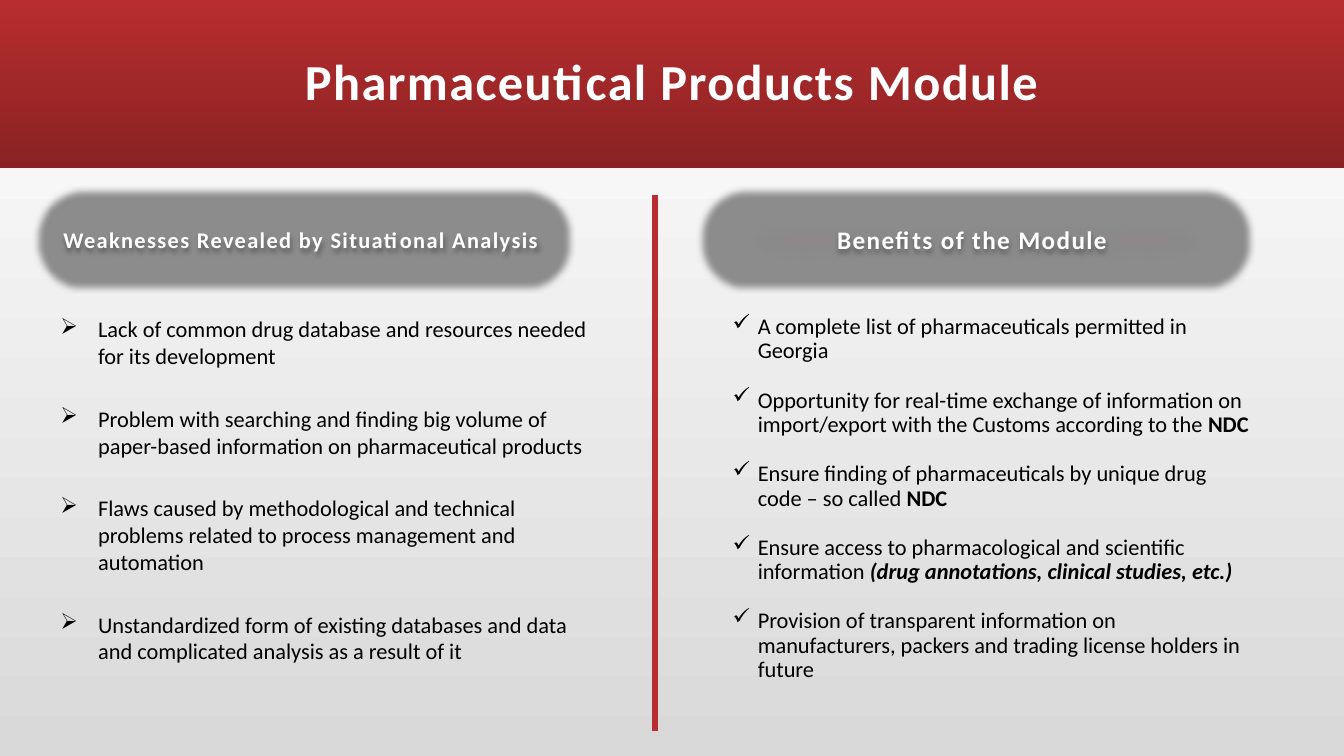
from dataclasses import dataclass

from lxml import etree
from pptx import Presentation
from pptx import util as u
from pptx.dml.color import RGBColor
from pptx.enum import shapes, text
from pptx.oxml import parse_xml
from pptx.oxml.ns import nsdecls, qn

Pt = u.Pt
RED, DARK_RED, GREY = "B82D2F", "8A2223", "8C8C8C"
WHITE, BLACK, LIGHT_GREY = "FFFFFF", "000000", "D9D9D9"
SHADOW = (
    '<a:outerShdw blurRad="44450" dist="27940" dir="5400000" algn="ctr" rotWithShape="0">'
    '<a:srgbClr val="000000"><a:alpha val="32000"/></a:srgbClr></a:outerShdw>'
)


@dataclass
class Span:
    text: str
    bold: bool = False
    italic: bool = False


@dataclass
class Box:
    left: float
    top: float
    width: float
    height: float

    def lengths(self) -> list[int]:
        return [Pt(v) for v in (self.left, self.top, self.width, self.height)]


@dataclass
class Column:
    heading: str
    heading_size: float
    heading_box: Box
    list_box: Box
    bullet: str
    indent: float
    line_spacing: float
    gap: float
    items: list[list[Span]]


COLUMNS = [
    Column(
        "Weaknesses Revealed by Situational Analysis ", 16,
        Box(26.6, 144.7, 381.6, 53.3), Box(36, 221.8, 393, 282), "➢", 27, 1, 25.5,
        [
            [Span("Lack of common drug database and resources needed for its development")],
            [Span("Problem with searching and finding big volume of paper-based "
                  "information on pharmaceutical products")],
            [Span("Flaws caused by methodological and technical problems related to "
                  "process management and automation")],
            [Span("Unstandardized form of existing databases and data and complicated "
                  "analysis as a result of it")],
        ],
    ),
    Column(
        "Benefits of the Module ", 18,
        Box(500.4, 144.7, 393.1, 53.3), Box(516.2, 221.8, 387.4, 288), "✓", 18, 0.9, 18,
        [
            [Span("A complete list of pharmaceuticals permitted in Georgia")],
            [Span("Opportunity for real-time exchange of information on import/export "
                  "with the Customs according to the "), Span("NDC", True)],
            [Span("Ensure finding of pharmaceuticals by unique drug code – so called "),
             Span("NDC", True)],
            [Span("Ensure access to pharmacological and scientific information "),
             Span("(drug annotations, clinical studies, etc.)", True, True)],
            [Span("Provision of transparent information on manufacturers, packers and "
                  "trading license holders in future")],
        ],
    ),
]


def rgb(value: str) -> RGBColor:
    return RGBColor.from_string(value)


def set_gradient(fill, start: str, end: str, angle: float) -> None:
    fill.gradient()
    fill.gradient_angle = angle
    for stop, color in zip(fill.gradient_stops, (start, end)):
        stop.color.rgb = rgb(color)


def set_effects(sp, soft_edge: float = 0, shadow: str = "") -> None:
    """Replace the effects of a shape or connector; soft_edge is in points."""
    spPr = sp._element.spPr
    for old in spPr.findall(qn("a:effectLst")):
        spPr.remove(old)
    soft = f'<a:softEdge rad="{Pt(soft_edge)}"/>' if soft_edge else ""
    spPr.append(parse_xml(f'<a:effectLst {nsdecls("a")}>{shadow}{soft}</a:effectLst>'))


def add_block(s, kind, box: Box, color: str):
    sp = s.shapes.add_shape(kind, *box.lengths())
    sp.shadow.inherit = False
    sp.fill.solid()
    sp.fill.fore_color.rgb = rgb(color)
    sp.line.fill.background()
    return sp


def format_run(r, size: float, color: str, bold: bool = False, italic: bool = False) -> None:
    r.font.name = "Calibri"
    r.font.size = Pt(size)
    r.font.color.rgb = rgb(color)
    r.font.bold = bold
    r.font.italic = italic


def write_heading(sp, heading: str, size: float) -> None:
    """Centred bold white text with letters spaced by one point."""
    tf = sp.text_frame
    tf.word_wrap = True
    tf.vertical_anchor = text.MSO_ANCHOR.MIDDLE
    tf.text = heading
    p = tf.paragraphs[0]
    p.alignment = text.PP_ALIGN.CENTER
    r = p.runs[0]
    format_run(r, size, WHITE, bold=True)
    r.font._element.set("spc", "100")


def add_bullet(p, char: str, indent: float) -> None:
    pPr = p._p.get_or_add_pPr()
    pPr.set("marL", str(Pt(indent)))
    pPr.set("indent", str(-Pt(indent)))
    etree.SubElement(pPr, qn("a:buChar")).set("char", char)


def add_column(s, column: Column) -> None:
    b = column.heading_box
    halo_box = Box(b.left - 3, b.top - 12, b.width + 6, b.height + 24)
    halo = add_block(s, shapes.MSO_SHAPE.ROUNDED_RECTANGLE, halo_box, GREY)
    halo.adjustments[0] = 0.4
    set_effects(halo, soft_edge=5)

    banner = add_block(s, shapes.MSO_SHAPE.RECTANGLE, b, RED)
    set_effects(banner, soft_edge=25, shadow=SHADOW)
    write_heading(banner, column.heading, column.heading_size)

    tf = s.shapes.add_textbox(*column.list_box.lengths()).text_frame
    tf.word_wrap = True
    for i, spans in enumerate(column.items):
        p = tf.add_paragraph() if i else tf.paragraphs[0]
        p.line_spacing = column.line_spacing
        p.space_before = Pt(column.gap if i else 0)
        add_bullet(p, column.bullet, column.indent)
        for span in spans:
            r = p.add_run()
            r.text = span.text
            format_run(r, 16, BLACK, span.bold, span.italic)


def main() -> None:
    prs = Presentation()
    prs.slide_width, prs.slide_height = Pt(960), Pt(540)
    s = prs.slides.add_slide(prs.slide_layouts[6])
    set_gradient(s.background.fill, LIGHT_GREY, WHITE, 90)

    header = add_block(s, shapes.MSO_SHAPE.RECTANGLE, Box(0, 0, 960, 120), RED)
    set_gradient(header.fill, RED, DARK_RED, 270)
    title = s.shapes.add_textbox(*Box(84, 0, 792, 120).lengths())
    write_heading(title, "Pharmaceutical Products Module", 36)
    title.text_frame.paragraphs[0].line_spacing = 0.9

    divider = s.shapes.add_connector(
        shapes.MSO_CONNECTOR.STRAIGHT, Pt(468), Pt(139), Pt(468), Pt(522))
    divider.line.color.rgb = rgb(RED)
    divider.line.width = Pt(4)
    set_effects(divider)

    for column in COLUMNS:
        add_column(s, column)
    prs.save("out.pptx")


if __name__ == "__main__":
    main()
